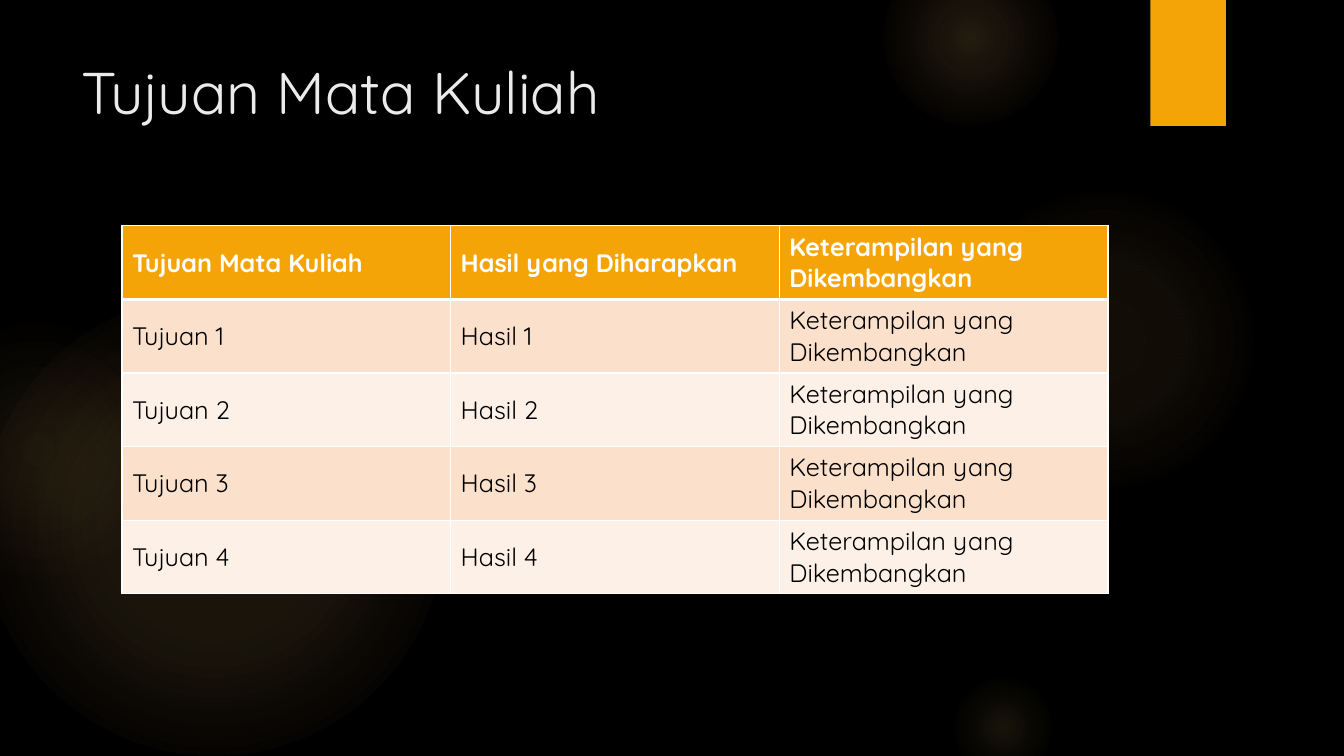
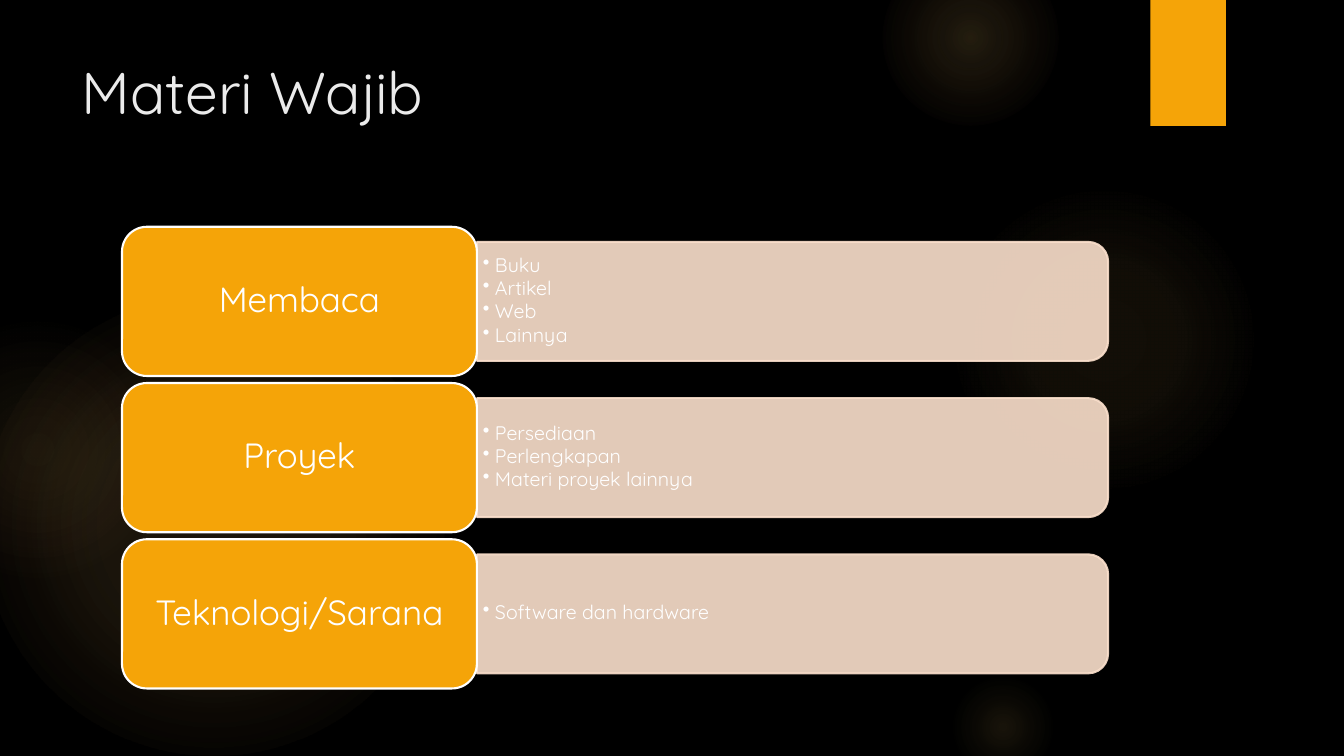
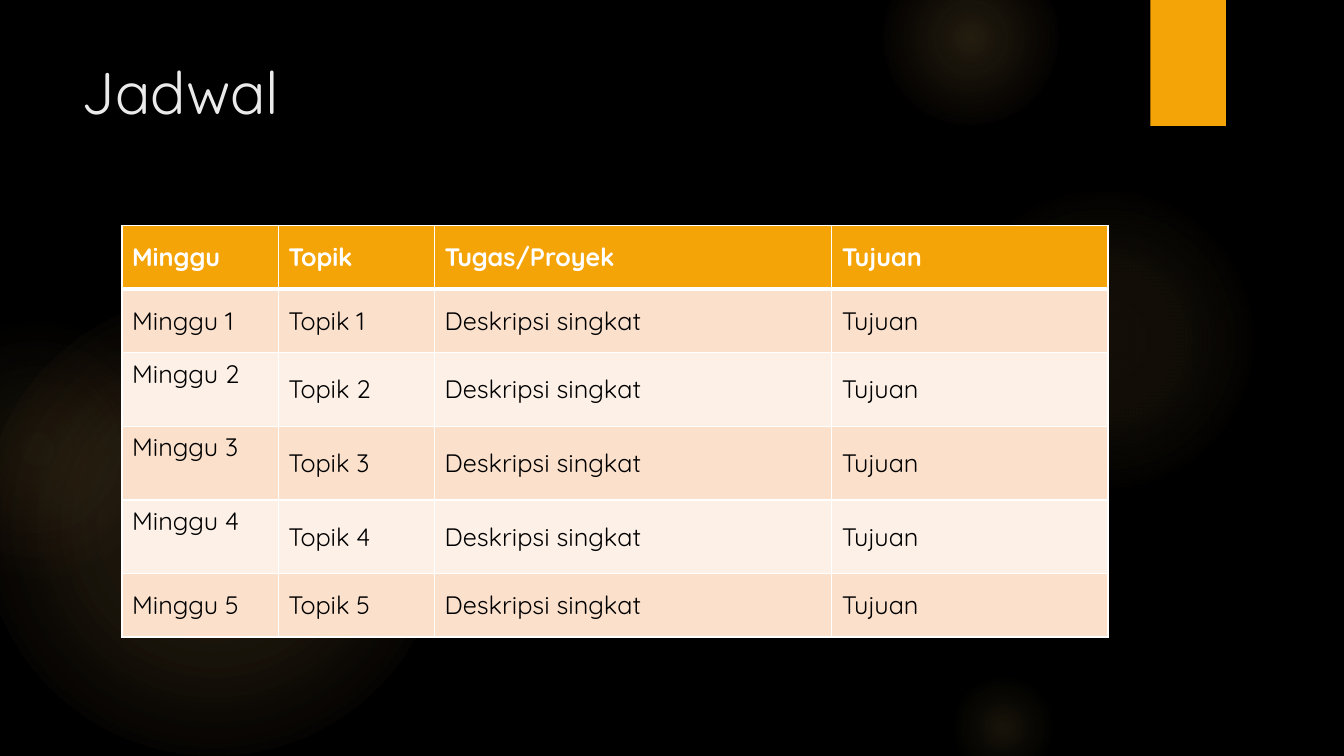
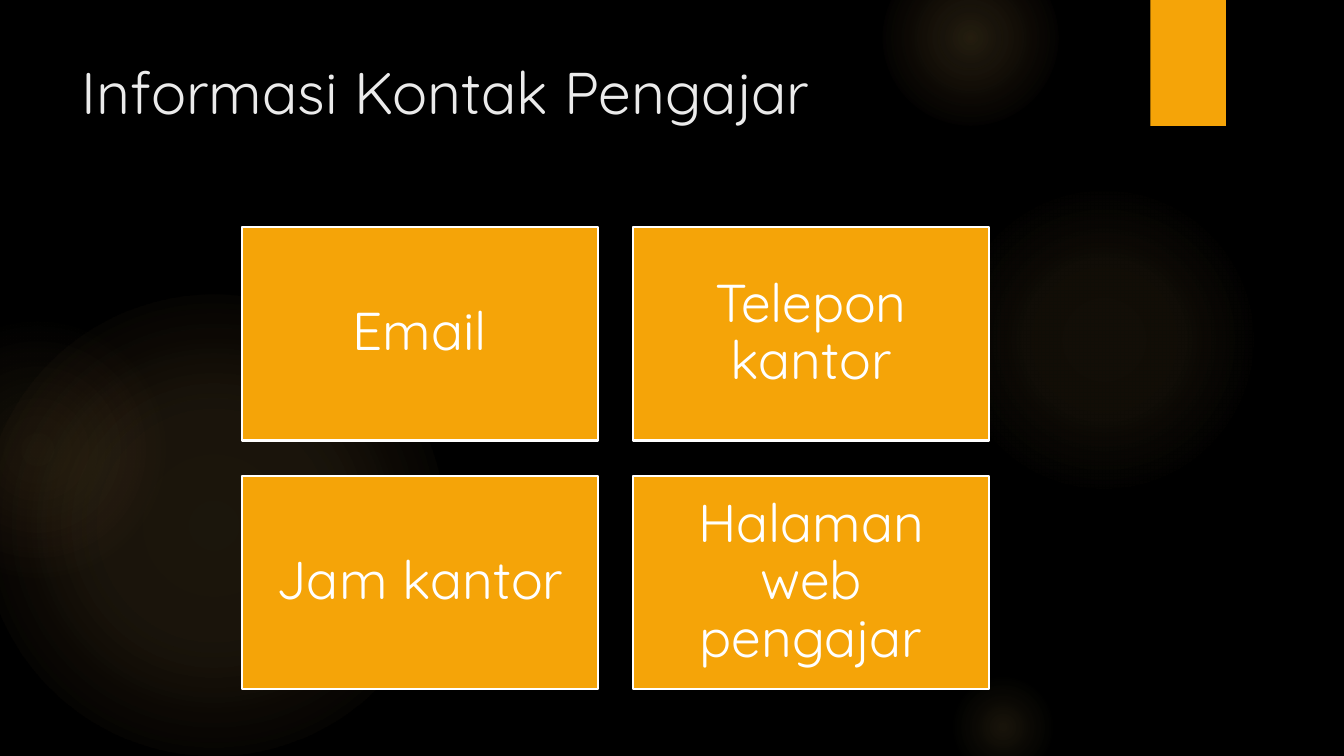
from lxml import etree
from pptx import Presentation
from pptx.dml.color import RGBColor
from pptx.enum import shapes, text
from pptx.oxml import parse_xml
from pptx.oxml.ns import nsdecls, qn
from pptx.util import Inches, Pt

BLACK = RGBColor(0x00, 0x00, 0x00)
WHITE = RGBColor(0xFF, 0xFF, 0xFF)
SMOKE = RGBColor(0xEB, 0xEB, 0xEB)
GOLD = RGBColor(0xF5, 0xA4, 0x08)
PEACH = RGBColor(0xFB, 0xE0, 0xCC)
CREAM = RGBColor(0xFD, 0xF0, 0xE7)
GLOW = RGBColor(0xFA, 0xC9, 0x6A)
CORAL = RGBColor(0xF5, 0x9B, 0x74)
FONT = "Quicksand"
KIND = shapes.MSO_SHAPE
MID = text.MSO_ANCHOR.MIDDLE
TOP = text.MSO_ANCHOR.TOP
LEFT = text.PP_ALIGN.LEFT
CENTER = text.PP_ALIGN.CENTER


def write(frame, words, size=18, color=WHITE, bold=False, align=LEFT,
          anchor=MID, space=1, pad=(0.1, 0.05), bullet=False):
    frame.word_wrap = True
    frame.vertical_anchor = anchor
    frame.margin_left = frame.margin_right = Inches(pad[0])
    frame.margin_top = frame.margin_bottom = Inches(pad[1])
    for num, line in enumerate(words.split("\n")):
        para = frame.add_paragraph() if num else frame.paragraphs[0]
        para.alignment = align
        para.line_spacing = space
        run = para.add_run()
        run.text = line
        run.font.name = FONT
        run.font.size = Pt(size)
        run.font.bold = bold
        run.font.color.rgb = color
        if bullet:
            para.space_after = Pt(1.5)
            props = para._p.get_or_add_pPr()
            props.set("marL", str(Inches(0.12)))
            props.set("indent", str(-Inches(0.12)))
            etree.SubElement(props, qn("a:buChar")).set("char", "•")


def block(page, kind, x, y, wide, high, fill=GOLD, line=None):
    shape = page.shapes.add_shape(
        kind, Inches(x), Inches(y), Inches(wide), Inches(high))
    shape.shadow.inherit = False
    shape.fill.solid()
    shape.fill.fore_color.rgb = fill
    if line is None:
        shape.line.fill.background()
    else:
        shape.line.color.rgb = line
        shape.line.width = Pt(1.5)
    return shape


prs = Presentation()
prs.slide_width = Inches(13.33)
prs.slide_height = Inches(7.5)
layout = prs.slide_layouts[5]
layout.background.fill.solid()
layout.background.fill.fore_color.rgb = BLACK
head = layout.placeholders[0]
head.left, head.top = Inches(0.71), Inches(0.5)
head.width, head.height = Inches(10.29), Inches(1.53)

pages = []
for name in ["Tujuan Mata Kuliah", "Materi Wajib", "Jadwal",
             "Informasi Kontak Pengajar"]:
    page = prs.slides.add_slide(layout)
    write(page.shapes.title.text_frame, name, size=42, color=SMOKE, anchor=TOP)
    pages.append(page)
goals, needs, plan, contact = pages

glows = [
    (-0.17, 2.92, 4.58, [(0, 11), (36, 10), (75, 0)], GLOW),
    (-0.92, 3.17, 2.58, [(0, 8), (36, 5), (71, 0)], CORAL),
    (9.41, 1.83, 3.08, [(0, 7), (36, 6), (69, 0)], GLOW),
    (8.75, -0.5, 1.75, [(0, 14), (36, 7), (73, 0)], GLOW),
    (9.41, 6.67, 1.08, [(0, 10), (31, 5), (66, 0)], GLOW),
]
for x, y, size, stops, edge in glows:
    orb = block(goals, KIND.OVAL, x, y, size, size)
    marks = "".join(
        f'<a:gs pos="{pos * 1000}"><a:srgbClr val="{GLOW if alpha else edge}">'
        f'<a:alpha val="{alpha * 1000}"/></a:srgbClr></a:gs>'
        for pos, alpha in stops)
    grad = parse_xml(
        f'<a:gradFill {nsdecls("a")}><a:gsLst>{marks}</a:gsLst>'
        '<a:path path="circle"><a:fillToRect l="50000" t="50000" '
        'r="50000" b="50000"/></a:path></a:gradFill>')
    solid = orb.element.spPr.find(qn("a:solidFill"))
    solid.getparent().replace(solid, grad)
    layout.shapes.element.append(orb.element)
tag = block(goals, KIND.RECTANGLE, 11.41, 0, 0.75, 1.25)
layout.shapes.element.append(tag.element)

skill = "Keterampilan yang Dikembangkan"
aims = [("Tujuan Mata Kuliah", "Hasil yang Diharapkan", skill)]
aims += [(f"Tujuan {n}", f"Hasil {n}", skill) for n in range(1, 5)]
weeks = [("Minggu", "Topik", "Tugas/Proyek", "Tujuan")]
weeks += [(f"Minggu {n}", f"Topik {n}", "Deskripsi singkat", "Tujuan")
          for n in range(1, 6)]
tables = [
    (goals, aims, [3.26] * 3, [0.73] * 5, []),
    (plan, weeks, [1.55, 1.55, 3.94, 2.74],
     [0.63, 0.63, 0.73, 0.73, 0.73, 0.63], [2, 3, 4]),
]
for page, rows, wides, highs, raised in tables:
    grid = page.shapes.add_table(
        len(rows), len(wides), Inches(1.21), Inches(2.24),
        Inches(sum(wides)), Inches(sum(highs))).table
    for col, wide in zip(grid.columns, wides):
        col.width = Inches(wide)
    for r, row in enumerate(rows):
        grid.rows[r].height = Inches(highs[r])
        for c, words in enumerate(row):
            cell = grid.cell(r, c)
            write(cell.text_frame, words, bold=r == 0,
                  color=BLACK if r else WHITE)
            cell.vertical_anchor = TOP if c == 0 and r in raised else MID
            props = cell._tc.get_or_add_tcPr()
            for side in "LRTB":
                thick = (r, side) in [(0, "B"), (1, "T")]
                props.append(parse_xml(
                    f'<a:ln{side} {nsdecls("a")} w="{Pt(3 if thick else 1)}">'
                    f'<a:solidFill><a:srgbClr val="{WHITE}"/></a:solidFill>'
                    f'</a:ln{side}>'))
            cell.fill.solid()
            cell.fill.fore_color.rgb = (
                GOLD if r == 0 else PEACH if r % 2 else CREAM)

items = [
    ("Membaca", "Buku\nArtikel\nWeb\nLainnya"),
    ("Proyek", "Persediaan\nPerlengkapan\nMateri proyek lainnya"),
    ("Teknologi/Sarana", "Software dan hardware"),
]
for n, (name, points) in enumerate(items):
    y = 2.25 + n * 1.55
    band = block(needs, KIND.ROUND_2_SAME_RECTANGLE, 7.27, y - 2.39,
                 1.18, 6.26, fill=PEACH, line=PEACH)
    band.rotation = 90
    for tint in band.element.spPr.iter(qn("a:srgbClr")):
        etree.SubElement(tint, qn("a:alpha")).set("val", "90000")
    box = needs.shapes.add_textbox(
        Inches(4.73), Inches(y + 0.2), Inches(6.2), Inches(1.07))
    write(box.text_frame, points, size=14, space=0.9, pad=(0.06, 0.03),
          bullet=True)
    label = block(needs, KIND.ROUNDED_RECTANGLE, 1.21, y, 3.52, 1.48,
                  line=WHITE)
    write(label.text_frame, name, size=25, align=CENTER, space=0.9)

ways = ["Email", "Telepon kantor", "Jam kantor", "Halaman web pengajar"]
for n, name in enumerate(ways):
    card = block(contact, KIND.RECTANGLE, 2.4 + n % 2 * 3.88,
                 2.25 + n // 2 * 2.47, 3.53, 2.12, line=WHITE)
    write(card.text_frame, name, size=38, align=CENTER, space=0.9,
          pad=(0.16, 0.16))

prs.save("out.pptx")
